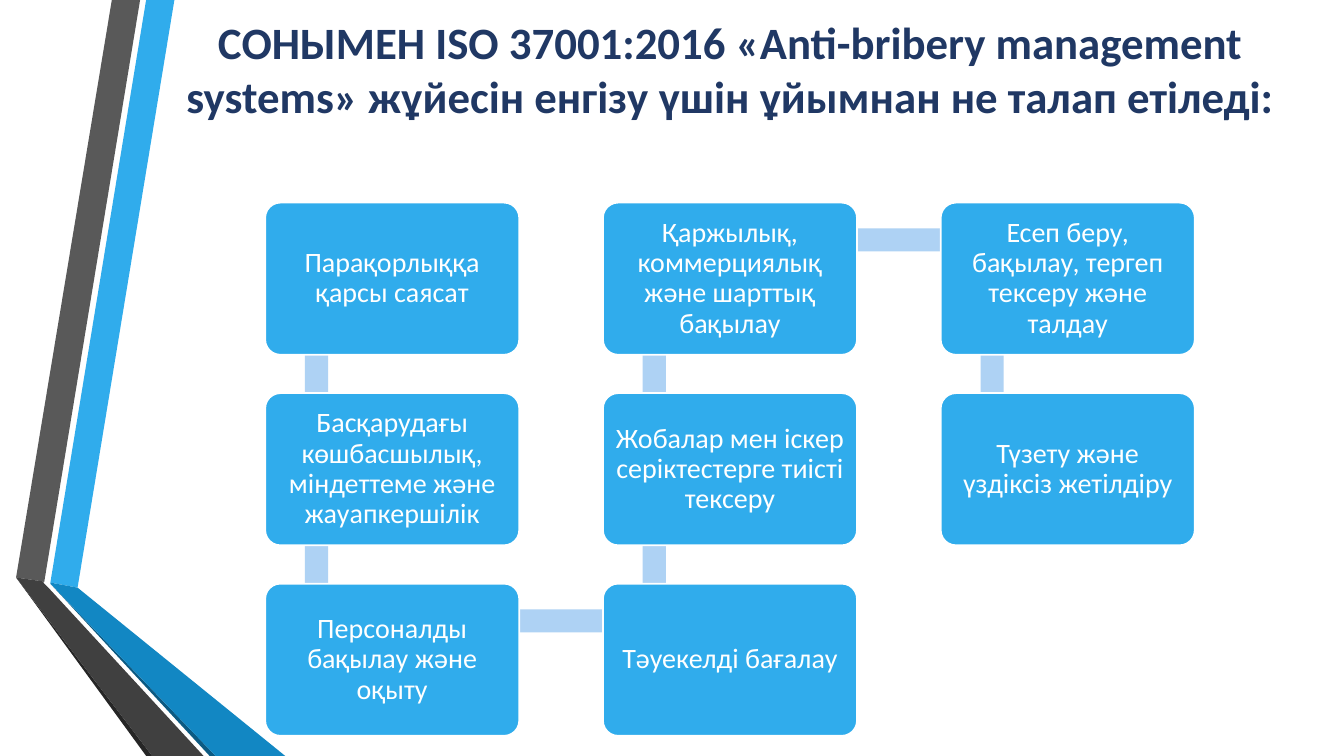
from pptx import Presentation
from pptx.dml.color import RGBColor
from pptx.enum.shapes import MSO_SHAPE as Preset
from pptx.enum.text import MSO_ANCHOR as Anchor, PP_ALIGN as Align
from pptx.util import Inches, Pt

WHITE = RGBColor(0xFF, 0xFF, 0xFF)
NAVY = RGBColor(0x20, 0x38, 0x64)
SKY = RGBColor(0x30, 0xAC, 0xEC)
PALE = RGBColor(0xAE, 0xD2, 0xF4)
BLUE = RGBColor(0x12, 0x87, 0xC3)
DEEP_BLUE = RGBColor(0x0C, 0x5A, 0x82)
GREY = RGBColor(0x59, 0x59, 0x59)
DARK_GREY = RGBColor(0x40, 0x40, 0x40)
BLACKISH = RGBColor(0x26, 0x26, 0x26)

HEADING = ("СОНЫМЕН ISO 37001:2016 «Anti-bribery management systems» "
           "жұйесін енгізу үшін ұйымнан не талап етіледі:")

# Ribbon outlines, in inches
RIBBONS = [
    (SKY, [(0.5, 5.78), (0.77, 5.83), (1.73, 0), (1.45, 0)]),
    (GREY, [(1.39, 0), (1.11, 0), (0.16, 5.73), (0.44, 5.77)]),
    (BLACKISH, [(0.16, 5.73), (1.45, 7.5), (1.51, 7.5)]),
    (DEEP_BLUE, [(0.5, 5.79), (2.08, 7.5), (2.14, 7.5)]),
    (BLUE, [(0.5, 5.79), (2.14, 7.5), (2.83, 7.5), (0.77, 5.83), (0.5, 5.78)]),
    (DARK_GREY, [(2.02, 7.5), (0.48, 5.83), (0.43, 5.78), (0.44, 5.77),
                 (0.16, 5.73), (1.51, 7.5)]),
]

# Steps in reading order, with their column and row
STEPS = [
    (0, 0, "Парақорлыққа қарсы саясат"),
    (0, 1, "Басқарудағы көшбасшылық, міндеттеме және жауапкершілік"),
    (0, 2, "Персоналды бақылау және оқыту"),
    (1, 2, "Тәуекелді бағалау"),
    (1, 1, "Жобалар мен іскер серіктестерге тиісті тексеру"),
    (1, 0, "Қаржылық, коммерциялық және шарттық бақылау"),
    (2, 0, "Есеп беру, бақылау, тергеп тексеру және талдау"),
    (2, 1, "Түзету және үздіксіз жетілдіру"),
]


class StepSlide:
    FONT = "Calibri"
    LEFT, TOP = 2.63, 2.01            # first grid cell
    COLUMN, ROW = 3.35, 1.89          # grid pitch
    STEP_WIDTH, STEP_HEIGHT = 2.52, 1.51
    BAND = 0.23                       # thickness of a link
    HOOK_X, HOOK_Y = 0.51, 0.37       # where links meet inside a step

    def __init__(self, deck):
        self.shapes = deck.slides.add_slide(deck.slide_layouts[6]).shapes

    def cell(self, column, row):
        return self.LEFT + column * self.COLUMN, self.TOP + row * self.ROW

    def paint(self, shape, fill, outline=None):
        shape.shadow.inherit = False
        shape.fill.solid()
        shape.fill.fore_color.rgb = fill
        if outline is None:
            shape.line.fill.background()
        else:
            shape.line.color.rgb = outline
            shape.line.width = Pt(1.25)

    def set_text(self, frame, text, size, color, bold=False, spacing=1.0):
        frame.word_wrap = True
        frame.vertical_anchor = Anchor.MIDDLE
        paragraph = frame.paragraphs[0]
        paragraph.alignment = Align.CENTER
        paragraph.line_spacing = spacing
        run = paragraph.add_run()
        run.text = text
        run.font.name, run.font.size, run.font.bold = self.FONT, Pt(size), bold
        run.font.color.rgb = color

    def ribbon(self, color, points):
        corners = [(Inches(x), Inches(y)) for x, y in points]
        outline = self.shapes.build_freeform(*corners[0])
        outline.add_line_segments(corners[1:], close=True)
        self.paint(outline.convert_to_shape(), color)

    def heading(self, text):
        box = self.shapes.add_textbox(Inches(1.27), Inches(0.21),
                                      Inches(11.95), Inches(0.94))
        self.set_text(box.text_frame, text, 32, NAVY, bold=True)

    def link(self, start, end):
        (x1, y1), (x2, y2) = self.cell(*start), self.cell(*end)
        half = self.BAND / 2
        x = min(x1, x2) + self.HOOK_X - (half if x1 == x2 else 0)
        y = min(y1, y2) + self.HOOK_Y - (half if y1 == y2 else 0)
        band = self.shapes.add_shape(
            Preset.RECTANGLE, Inches(x), Inches(y),
            Inches(abs(x2 - x1) or self.BAND), Inches(abs(y2 - y1) or self.BAND))
        self.paint(band, PALE)

    def step(self, column, row, text):
        x, y = self.cell(column, row)
        card = self.shapes.add_shape(
            Preset.ROUNDED_RECTANGLE, Inches(x), Inches(y),
            Inches(self.STEP_WIDTH), Inches(self.STEP_HEIGHT))
        card.adjustments[0] = 0.1
        self.paint(card, SKY, WHITE)
        frame = card.text_frame
        frame.margin_left = frame.margin_right = Inches(0.08)
        frame.margin_top = frame.margin_bottom = Inches(0.08)
        self.set_text(frame, text, 20, WHITE, spacing=0.9)


def main():
    deck = Presentation()
    deck.slide_width, deck.slide_height = Inches(13.33), Inches(7.5)
    slide = StepSlide(deck)

    # Side ribbons and heading
    for color, points in RIBBONS:
        slide.ribbon(color, points)
    slide.heading(HEADING)

    # Links lie under the steps
    for start, end in zip(STEPS, STEPS[1:]):
        slide.link(start[:2], end[:2])
    for column, row, text in STEPS:
        slide.step(column, row, text)

    deck.save("out.pptx")


if __name__ == "__main__":
    main()
